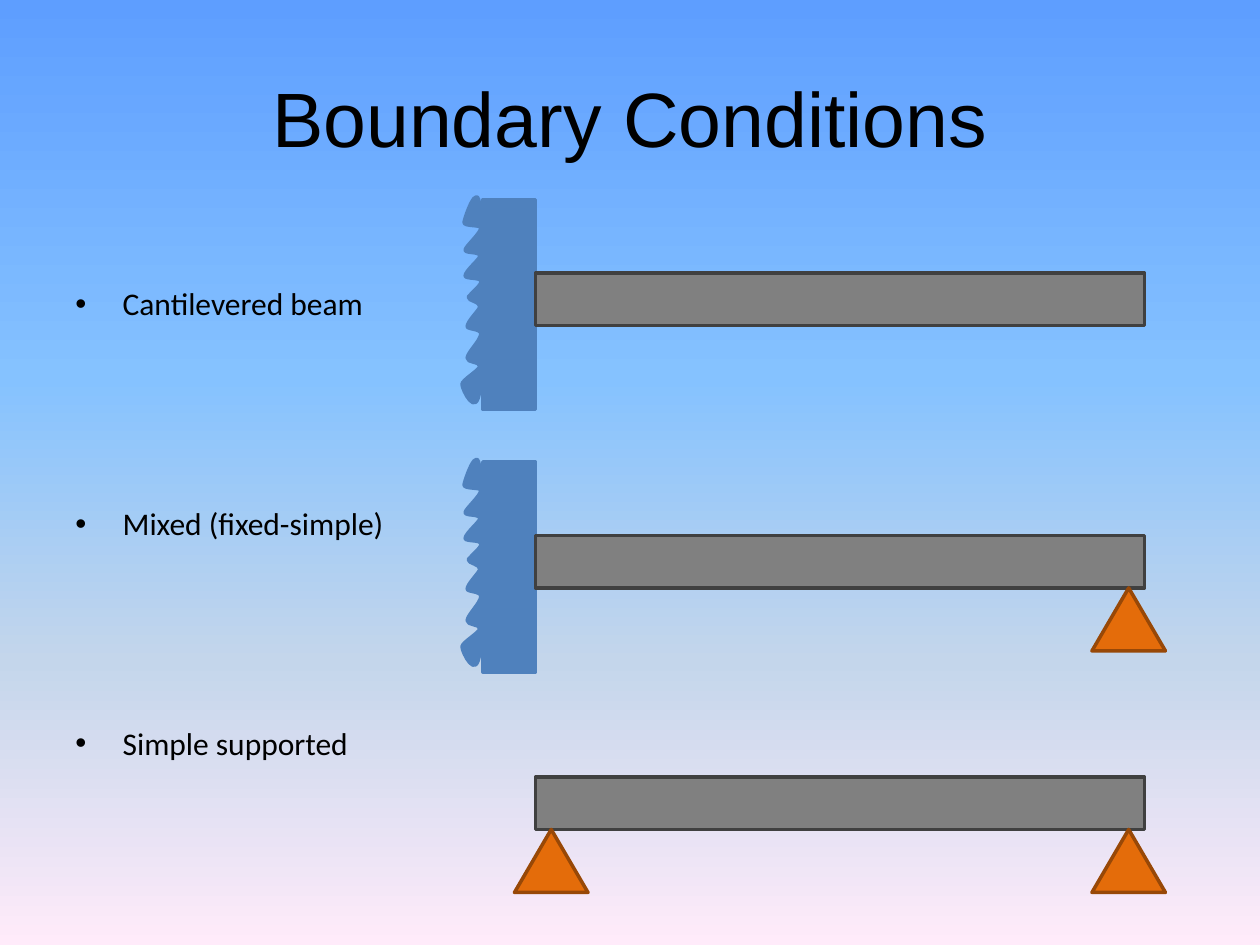
from dataclasses import dataclass

from lxml.etree import SubElement
from pptx import Presentation
from pptx.dml.color import RGBColor
from pptx.enum.shapes import MSO_SHAPE
from pptx.enum.text import MSO_ANCHOR, PP_ALIGN
from pptx.oxml.ns import qn
from pptx.util import Pt

PX = 7620  # EMU per px, 120 px to the inch

COLORS = {
    "text": "000000",
    "wall": "4F81BD",
    "beam": "808080",
    "edge": "404040",
    "prop": "E46C0A",
    "rim": "984807",
}
SKY = {0: "5E9EFF", 40: "85C2FF", 70: "C4D6EB", 100: "FFEBFA"}
LABELS = ["Cantilevered beam", "Mixed (fixed-simple)", "Simple supported"]

# Ragged wall edge: a start point, then cubic curves (two handles, end point)
EDGE_W, EDGE_H = 20, 230
START = (17, 27)
CURVES = [
    ((15, 0), (2, 39), (2, 42)),
    ((2, 46), (18, 44), (18, 47)),
    ((18, 52), (4, 64), (3, 68)),
    ((3, 72), (17, 69), (17, 74)),
    ((17, 77), (3, 88), (3, 93)),
    ((4, 96), (18, 94), (18, 98)),
    ((20, 100), (8, 110), (6, 113)),
    ((6, 117), (17, 117), (17, 122)),
    ((17, 125), (5, 136), (5, 141)),
    ((5, 144), (18, 143), (18, 148)),
    ((18, 154), (5, 166), (5, 171)),
    ((5, 176), (17, 174), (17, 179)),
    ((16, 183), (0, 192), (0, 196)),
    ((0, 201), (14, 230), (17, 201)),
    ((20, 173), (20, 53), START),
]


@dataclass
class Part:
    kind: MSO_SHAPE
    width: int
    height: int
    fill: str
    line: str


WALL = Part(MSO_SHAPE.RECTANGLE, 50, 200, "wall", "wall")
BEAM = Part(MSO_SHAPE.RECTANGLE, 580, 50, "beam", "edge")
PROP = Part(MSO_SHAPE.ISOSCELES_TRIANGLE, 70, 60, "prop", "rim")

WALL_X, BEAM_X = 460, 510
LEFT_X, RIGHT_X = 490, 1040


@dataclass
class Case:
    top: int  # top of the beam
    fixed: bool
    props: tuple[int, ...]
    group: bool = False


CASES = [
    Case(260, True, ()),
    Case(510, True, (RIGHT_X,)),
    Case(740, False, (LEFT_X, RIGHT_X), True),
]


def paint(shape, fill: str, line: str) -> None:
    shape.shadow.inherit = False
    shape.fill.solid()
    shape.fill.fore_color.rgb = RGBColor.from_string(COLORS[fill])
    shape.line.color.rgb = RGBColor.from_string(COLORS[line])
    shape.line.width = Pt(2)


def place(shapes, part: Part, left: int, top: int) -> None:
    shape = shapes.add_shape(part.kind, left * PX, top * PX,
                             part.width * PX, part.height * PX)
    paint(shape, part.fill, part.line)


def draw_edge(shapes, left: int, top: int) -> None:
    # The corners set the frame; the curves then take their place
    pen = shapes.build_freeform(left, top, scale=PX)
    pen.add_line_segments([(left + EDGE_W, top + EDGE_H)], close=False)
    shape = pen.convert_to_shape()
    track = shape.element.find(".//" + qn("a:path"))
    for node in list(track):
        track.remove(node)
    for tag, spots in [("moveTo", [START])] + [("cubicBezTo", c) for c in CURVES]:
        node = SubElement(track, qn("a:" + tag))
        for x, y in spots:
            SubElement(node, qn("a:pt"), x=str(x), y=str(y))
    SubElement(track, qn("a:close"))
    paint(shape, "wall", "wall")


def draw_case(shapes, case: Case) -> None:
    if case.fixed:
        place(shapes, WALL, WALL_X, case.top - 70)
        draw_edge(shapes, WALL_X - EDGE_W, case.top - 90)
    if case.group:
        shapes = shapes.add_group_shape().shapes
    place(shapes, BEAM, BEAM_X, case.top)
    for left in case.props:
        place(shapes, PROP, left, case.top + BEAM.height)


def add_text(shapes, lines: list[str], box: tuple[int, ...], font: str, size: int):
    frame = shapes.add_textbox(*(side * PX for side in box)).text_frame
    frame.word_wrap = True
    frame.text = "\n".join(lines)
    for para in frame.paragraphs:
        for run in para.runs:
            run.font.name = font
            run.font.size = Pt(size)
            run.font.color.rgb = RGBColor.from_string(COLORS["text"])
    return frame


def draw_sky(slide) -> None:
    fill = slide.background.fill
    fill.gradient()
    fill.gradient_angle = 270
    stops = slide.element.find(".//" + qn("a:gsLst"))
    for stop in list(stops):
        stops.remove(stop)
    for spot, color in SKY.items():
        stop = SubElement(stops, qn("a:gs"), pos=str(spot * 1000))
        SubElement(stop, qn("a:srgbClr"), val=color)


def main() -> None:
    deck = Presentation()
    deck.slide_width, deck.slide_height = 1200 * PX, 900 * PX
    slide = deck.slides.add_slide(deck.slide_layouts[6])
    shapes = slide.shapes
    draw_sky(slide)

    # Title
    title = add_text(shapes, ["Boundary Conditions"], (60, 36, 1080, 150), "Arial", 44)
    title.vertical_anchor = MSO_ANCHOR.MIDDLE
    title.paragraphs[0].alignment = PP_ALIGN.CENTER

    # Bullet list, spaced to sit beside the beams
    body = add_text(shapes, LABELS, (60, 180, 1080, 720), "Calibri", 18)
    body.margin_top = 91 * PX
    for row, para in enumerate(body.paragraphs):
        para.space_before = Pt(104 if row else 0)
        props = para._p.get_or_add_pPr()
        props.set("marL", str(45 * PX))
        props.set("indent", str(-45 * PX))
        SubElement(props, qn("a:buFont"), typeface="Arial")
        SubElement(props, qn("a:buChar"), char="•")

    # Beams with their supports
    for case in CASES:
        draw_case(shapes, case)

    deck.save("out.pptx")


if __name__ == "__main__":
    main()
